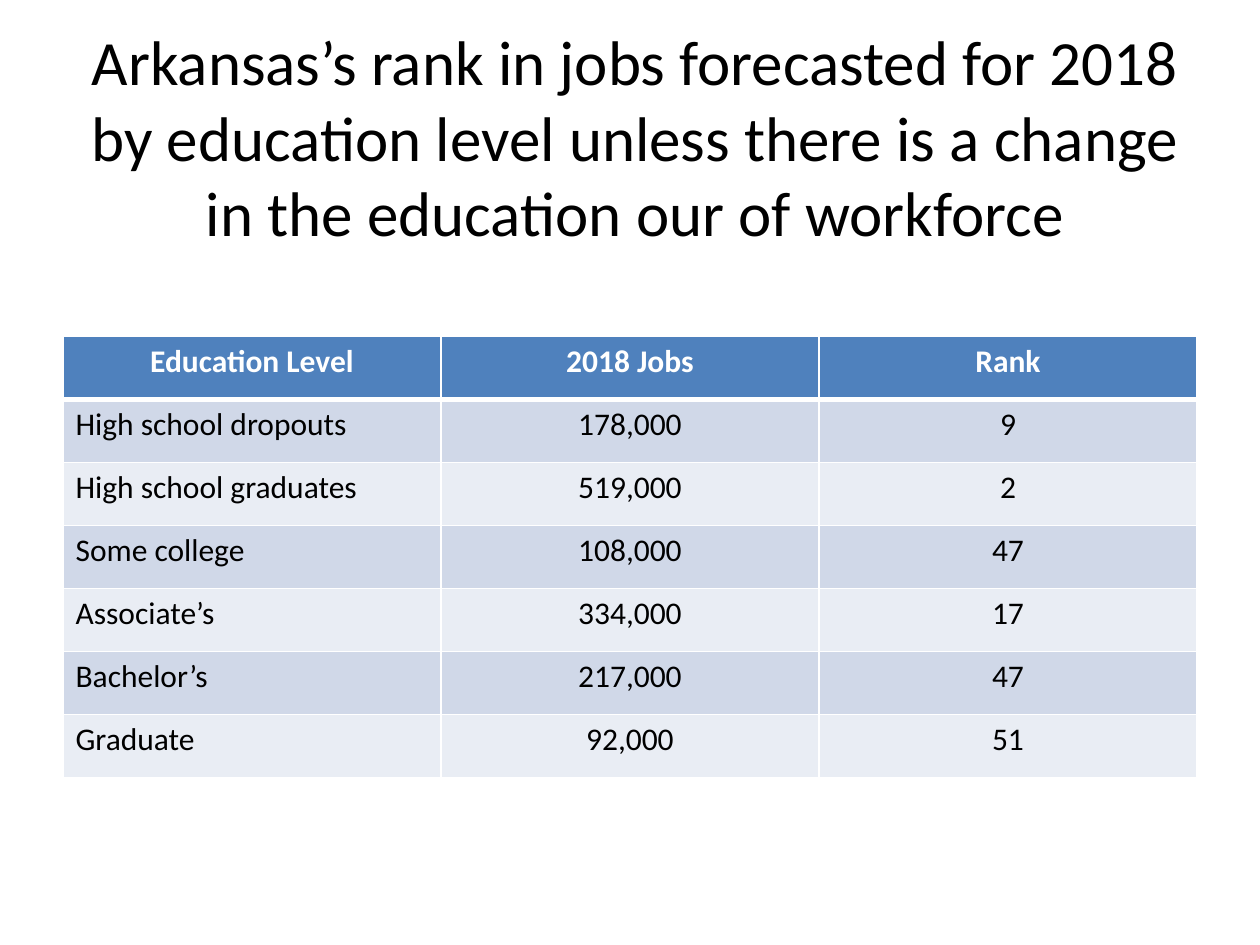
from lxml.etree import SubElement
from pptx import Presentation
from pptx.dml.color import RGBColor
from pptx.enum.text import MSO_ANCHOR, PP_ALIGN
from pptx.oxml.ns import qn
from pptx.util import Cm, Pt

TITLE = ("Arkansas’s rank in jobs forecasted for 2018 by education level "
         "unless there is a change in the education our of workforce")
ROWS = [
    ("Education Level", "2018 Jobs", "Rank"),
    ("High school dropouts", "178,000", "9"),
    ("High school graduates", "519,000", "2"),
    ("Some college", "108,000", "47"),
    ("Associate’s", "334,000", "17"),
    ("Bachelor’s", "217,000", "47"),
    ("Graduate", "92,000", "51"),
]
HEADER_FILL, BAND_FILLS = "4F81BD", ("E9EDF4", "D0D8E8")
BLACK, WHITE = "000000", "FFFFFF"
COL_W, ROW_H = 7.62, 1.27


def rgb(value):
    return RGBColor.from_string(value)


def format_text(tf, size, color, align, bold=False):
    p = tf.paragraphs[0]
    p.alignment = align
    font = p.runs[0].font
    font.name, font.size, font.bold = "Calibri", Pt(size), bold
    font.color.rgb = rgb(color)


def add_borders(cell, top, bottom):
    tc_pr = cell._tc.get_or_add_tcPr()
    for side, width in (("L", 1), ("R", 1), ("T", top), ("B", bottom)):
        ln = SubElement(tc_pr, qn(f"a:ln{side}"), w=str(Pt(width)))
        fill = SubElement(ln, qn("a:solidFill"))
        SubElement(fill, qn("a:srgbClr"), val=WHITE)


def add_title(slide):
    title = slide.shapes.title
    title.left, title.top, title.width, title.height = Cm(1.47), Cm(0.84), Cm(22.66), Cm(3.81)
    tf = title.text_frame
    tf.text = TITLE
    tf.word_wrap = True
    tf.vertical_anchor = MSO_ANCHOR.MIDDLE
    format_text(tf, 36, BLACK, PP_ALIGN.CENTER)


def add_jobs_table(slide):
    n_rows, n_cols = len(ROWS), len(ROWS[0])
    table = slide.shapes.add_table(n_rows, n_cols, Cm(1.27), Cm(6.78),
                                   Cm(COL_W * n_cols), Cm(ROW_H * n_rows)).table
    for i, row in enumerate(ROWS):
        header = i == 0
        for j, text in enumerate(row):
            cell = table.cell(i, j)
            cell.text = text
            centered = header or j > 0
            format_text(cell.text_frame, 18, WHITE if header else BLACK,
                        PP_ALIGN.CENTER if centered else PP_ALIGN.LEFT, header)
            add_borders(cell, 3 if i == 1 else 1, 3 if header else 1)
            cell.fill.solid()
            cell.fill.fore_color.rgb = rgb(HEADER_FILL if header else BAND_FILLS[i % 2])


def main():
    prs = Presentation()
    prs.slide_width, prs.slide_height = Cm(25.4), Cm(19.05)
    slide = prs.slides.add_slide(prs.slide_layouts[5])
    add_title(slide)
    add_jobs_table(slide)
    prs.save("out.pptx")


if __name__ == "__main__":
    main()
